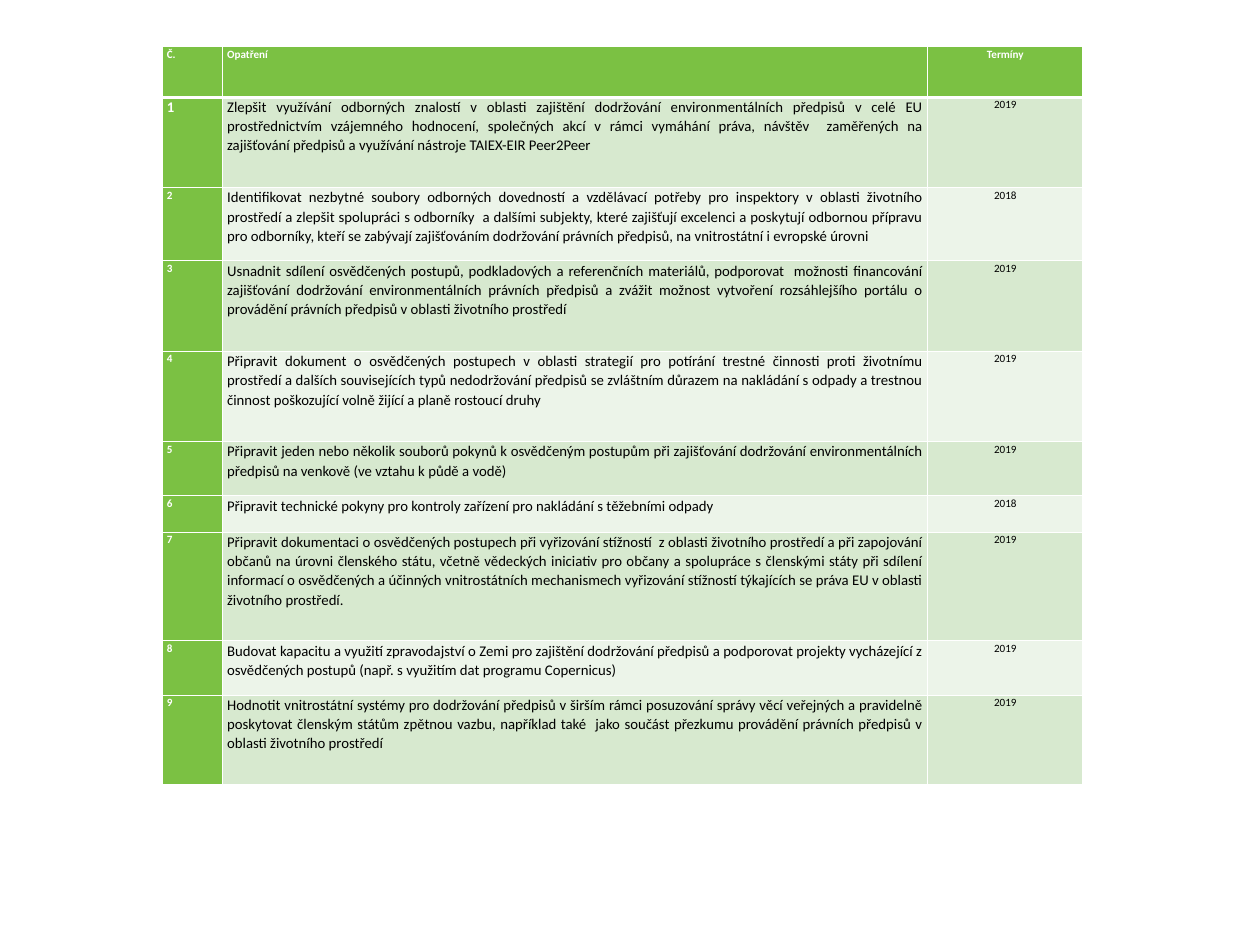
from dataclasses import dataclass

from pptx import Presentation
from pptx.dml.color import RGBColor
from pptx.enum.text import MSO_ANCHOR, PP_ALIGN as Align
from pptx.oxml import parse_xml
from pptx.oxml.ns import nsdecls
from pptx.table import _Cell as Cell
from pptx.util import Pt

GREEN, WHITE, BLACK = "7BC143", "FFFFFF", "000000"
BANDS = ("D7E9CF", "ECF4E9")
COL_WIDTHS = (49, 573, 126)
HEADINGS = ("Č.", "Opatření", "Termíny")
HEADING_ALIGNS = (Align.LEFT, Align.LEFT, Align.CENTER)
HEADER_HEIGHT = 41
THIN, THICK = 1, 3


@dataclass
class Measure:
    text: str
    year: str
    height: float
    number_size: float = 9
    align: Align = Align.JUSTIFY


@dataclass
class Style:
    fill: str
    color: str
    size: float
    bold: bool
    align: Align


MEASURES = [
    Measure("Zlepšit využívání odborných znalostí v oblasti zajištění dodržování environmentálních "
            "předpisů v celé EU prostřednictvím vzájemného hodnocení, společných akcí v rámci "
            "vymáhání práva, návštěv  zaměřených na zajišťování předpisů a využívání nástroje "
            "TAIEX-EIR Peer2Peer", "2019", 73.5, number_size=12),
    Measure("Identifikovat nezbytné soubory odborných dovedností a vzdělávací potřeby pro "
            "inspektory v oblasti životního prostředí a zlepšit spolupráci s odborníky  a dalšími "
            "subjekty, které zajišťují excelenci a poskytují odbornou přípravu pro odborníky, "
            "kteří se zabývají zajišťováním dodržování právních předpisů, na vnitrostátní "
            "i evropské úrovni", "2018", 59.5),
    Measure("Usnadnit sdílení osvědčených postupů, podkladových a referenčních materiálů, "
            "podporovat  možnosti financování zajišťování dodržování environmentálních právních "
            "předpisů a zvážit možnost vytvoření rozsáhlejšího portálu o provádění právních "
            "předpisů v oblasti životního prostředí", "2019", 73.5),
    Measure("Připravit dokument o osvědčených postupech v oblasti strategií pro potírání trestné "
            "činnosti proti životnímu prostředí a dalších souvisejících typů nedodržování předpisů "
            "se zvláštním důrazem na nakládání s odpady a trestnou činnost poškozující volně "
            "žijící a planě rostoucí druhy", "2019", 73.5),
    Measure("Připravit jeden nebo několik souborů pokynů k osvědčeným postupům při zajišťování "
            "dodržování environmentálních předpisů na venkově (ve vztahu k půdě a vodě)",
            "2019", 44),
    Measure("Připravit technické pokyny pro kontroly zařízení pro nakládání s těžebními odpady",
            "2018", 29.5, align=Align.LEFT),
    Measure("Připravit dokumentaci o osvědčených postupech při vyřizování stížností  z oblasti "
            "životního prostředí a při zapojování občanů na úrovni členského státu, včetně "
            "vědeckých iniciativ pro občany a spolupráce s členskými státy při sdílení informací "
            "o osvědčených a účinných vnitrostátních mechanismech vyřizování stížností týkajících "
            "se práva EU v oblasti životního prostředí.", "2019", 88.5),
    Measure("Budovat kapacitu a využití zpravodajství o Zemi pro zajištění dodržování předpisů "
            "a podporovat projekty vycházející z osvědčených postupů (např. s využitím dat "
            "programu Copernicus)", "2019", 44),
    Measure("Hodnotit vnitrostátní systémy pro dodržování předpisů v širším rámci posuzování "
            "správy věcí veřejných a pravidelně poskytovat členským státům zpětnou vazbu, "
            "například také  jako součást přezkumu provádění právních předpisů v oblasti "
            "životního prostředí", "2019", 72.5),
]


def rgb(color: str) -> RGBColor:
    return RGBColor.from_string(color)


def set_borders(cell: Cell, top: float, bottom: float) -> None:
    tc_pr = cell._tc.get_or_add_tcPr()
    widths = {"lnL": THIN, "lnR": THIN, "lnT": top, "lnB": bottom}
    for i, (side, width) in enumerate(widths.items()):
        tc_pr.insert(i, parse_xml(
            f'<a:{side} {nsdecls("a")} w="{Pt(width)}"><a:solidFill>'
            f'<a:srgbClr val="{WHITE}"/></a:solidFill></a:{side}>'))


def fill_cell(cell: Cell, text: str, style: Style) -> None:
    cell.margin_left = cell.margin_right = Pt(3.6)
    cell.margin_top = cell.margin_bottom = Pt(0)
    cell.vertical_anchor = MSO_ANCHOR.TOP
    cell.fill.solid()
    cell.fill.fore_color.rgb = rgb(style.fill)
    p = cell.text_frame.paragraphs[0]
    p.text = text
    p.alignment = style.align
    p.line_spacing = 1.07
    font = p.runs[0].font
    font.name, font.size, font.bold = "Calibri", Pt(style.size), style.bold
    font.color.rgb = rgb(style.color)


def main() -> None:
    prs = Presentation()
    prs.slide_width, prs.slide_height = Pt(1024), Pt(768)
    s = prs.slides.add_slide(prs.slide_layouts[6])

    # Table grid
    heights = [HEADER_HEIGHT] + [m.height for m in MEASURES]
    table = s.shapes.add_table(len(heights), len(COL_WIDTHS), Pt(132), Pt(38),
                               Pt(sum(COL_WIDTHS)), Pt(sum(heights))).table
    for column, width in zip(table.columns, COL_WIDTHS):
        column.width = Pt(width)
    for row, height in zip(table.rows, heights):
        row.height = Pt(height)

    # Header row
    for cell, heading, align in zip(table.rows[0].cells, HEADINGS, HEADING_ALIGNS):
        fill_cell(cell, heading, Style(GREEN, WHITE, 9, True, align))
        set_borders(cell, THIN, THICK)

    # Numbered measures
    for n, m in enumerate(MEASURES, 1):
        band = BANDS[(n - 1) % 2]
        number, text, year = table.rows[n].cells
        fill_cell(number, str(n), Style(GREEN, WHITE, m.number_size, True, Align.LEFT))
        fill_cell(text, m.text, Style(band, BLACK, 12, False, m.align))
        fill_cell(year, m.year, Style(band, BLACK, 9, False, Align.CENTER))
        for cell in (number, text, year):
            set_borders(cell, THICK if n == 1 else THIN, THIN)

    prs.save("out.pptx")


if __name__ == "__main__":
    main()
